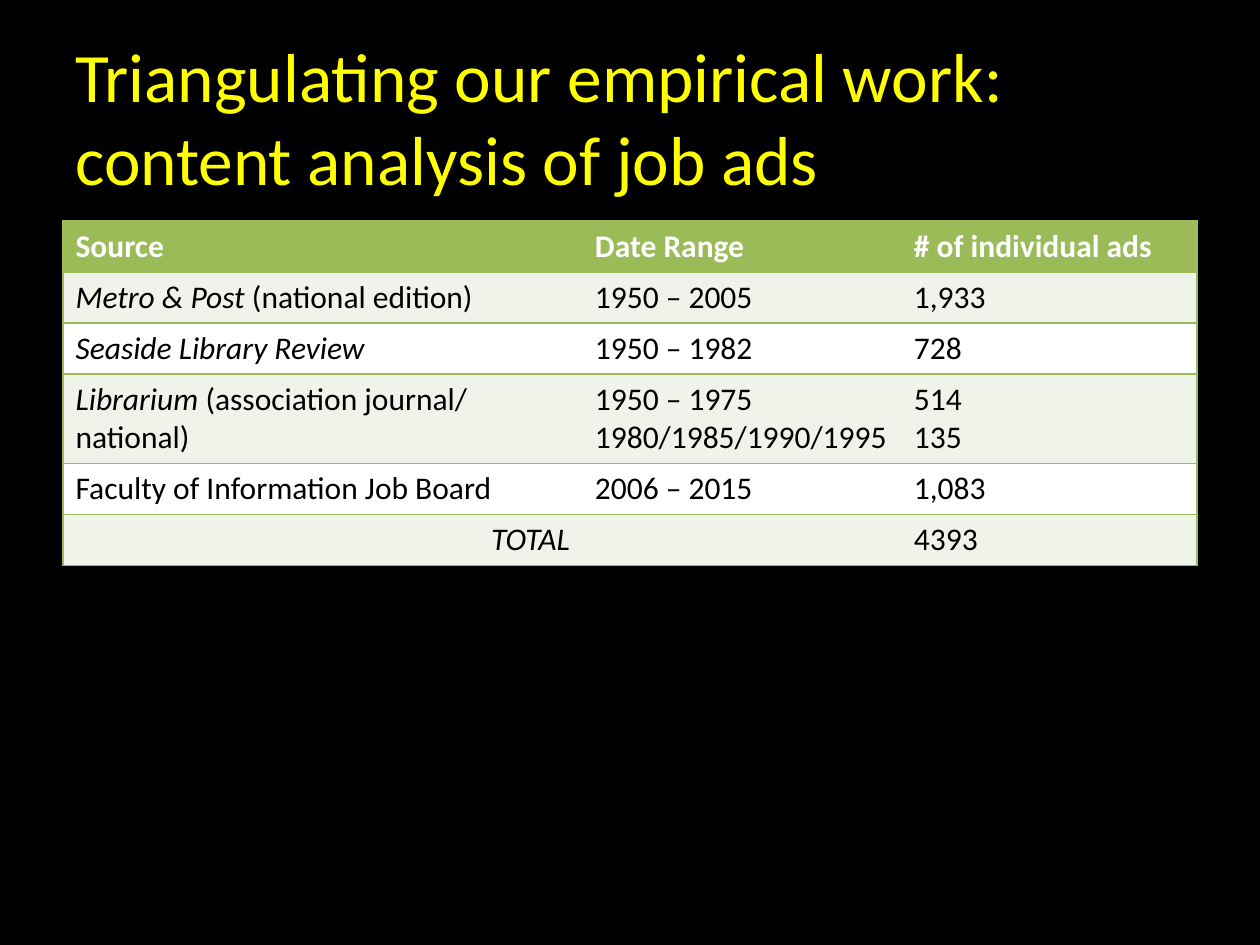
from dataclasses import dataclass

from lxml.etree import SubElement
from pptx import Presentation
from pptx.dml.color import RGBColor
from pptx.enum.text import MSO_ANCHOR, PP_ALIGN
from pptx.oxml.ns import qn
from pptx.util import Cm, Pt

COLORS = {
    "background": "000000",
    "title": "FFFF00",
    "accent": "9BBB59",
    "header_text": "FFFFFF",
    "body_text": "000000",
    "band": "EFF3EA",
    "plain": "FFFFFF",
}
FONT = "Calibri"
COL_WIDTHS = (10.47, 6.43, 5.96)
LINE_HEIGHT = 0.77
ROW_PADDING = 0.26


@dataclass(frozen=True)
class AdSource:
    name: str
    note: str
    dates: tuple[str, ...]
    counts: tuple[str, ...]
    align: PP_ALIGN = PP_ALIGN.LEFT


HEADER = AdSource("", "Source", ("Date Range",), ("# of individual ads",))
SOURCES = (
    AdSource("Metro & Post", " (national edition)", ("1950 – 2005",), ("1,933",)),
    AdSource("Seaside Library Review", "", ("1950 – 1982",), ("728",)),
    AdSource("Librarium ", "(association journal/ national)",
             ("1950 – 1975", "1980/1985/1990/1995"), ("514", "135")),
    AdSource("", "Faculty of Information Job Board", ("2006 – 2015",), ("1,083",)),
    AdSource("TOTAL", "", (), ("4393",), PP_ALIGN.RIGHT),
)


def rgb(name: str) -> RGBColor:
    return RGBColor.from_string(COLORS[name])


def style_font(p, size: float, color: str, bold: bool = False) -> None:
    p.font.name = FONT
    p.font.size = Pt(size)
    p.font.bold = bold
    p.font.color.rgb = rgb(color)


def set_borders(cell, visible: str) -> None:
    """Draw the sides listed in visible (from L, R, T, B) and clear the others."""
    tc_pr = cell._tc.get_or_add_tcPr()
    for side in "LRTB":
        ln = SubElement(tc_pr, qn(f"a:ln{side}"), w=str(Pt(1)))
        if side in visible:
            fill = SubElement(ln, qn("a:solidFill"))
            SubElement(fill, qn("a:srgbClr"), val=COLORS["accent"])
        else:
            SubElement(ln, qn("a:noFill"))


def add_title(slide, text: str) -> None:
    s = slide.shapes.add_textbox(Cm(1.27), Cm(0.76), Cm(22.86), Cm(3.18))
    tf = s.text_frame
    tf.word_wrap = True
    tf.vertical_anchor = MSO_ANCHOR.MIDDLE
    p = tf.paragraphs[0]
    p.text = text
    style_font(p, 39.6, "title")


def fill_row(row, source: AdSource, fill: str, color: str, bold: bool) -> None:
    lines = max(len(source.dates), len(source.counts))
    row.height = Cm(lines * LINE_HEIGHT + ROW_PADDING)
    name_cell, dates_cell, counts_cell = row.cells

    p = name_cell.text_frame.paragraphs[0]
    p.alignment = source.align
    for text, italic in ((source.name, True), (source.note, False)):
        if text:
            r = p.add_run()
            r.text = text
            r.font.italic = italic
    dates_cell.text = "\n".join(source.dates)
    counts_cell.text = "\n".join(source.counts)

    for cell, sides in zip(row.cells, ("LTB", "TB", "RTB")):
        set_borders(cell, sides)
        cell.fill.solid()
        cell.fill.fore_color.rgb = rgb(fill)
        for p in cell.text_frame.paragraphs:
            style_font(p, 18, color, bold)


def add_sources_table(slide) -> None:
    table = slide.shapes.add_table(
        len(SOURCES) + 1, len(COL_WIDTHS),
        Cm(1.27), Cm(4.45), Cm(sum(COL_WIDTHS)), Cm(6.93)).table
    table.first_row = table.horz_banding = False
    for column, width in zip(table.columns, COL_WIDTHS):
        column.width = Cm(width)
    header_row, *body_rows = table.rows
    fill_row(header_row, HEADER, "accent", "header_text", True)
    for i, (row, source) in enumerate(zip(body_rows, SOURCES)):
        fill_row(row, source, "plain" if i % 2 else "band", "body_text", False)


def main() -> None:
    prs = Presentation()
    prs.slide_width, prs.slide_height = Cm(25.4), Cm(19.05)
    slide = prs.slides.add_slide(prs.slide_layouts[6])
    slide.background.fill.solid()
    slide.background.fill.fore_color.rgb = rgb("background")
    add_title(slide, "Triangulating our empirical work: content analysis of job ads")
    add_sources_table(slide)
    prs.save("out.pptx")


if __name__ == "__main__":
    main()
